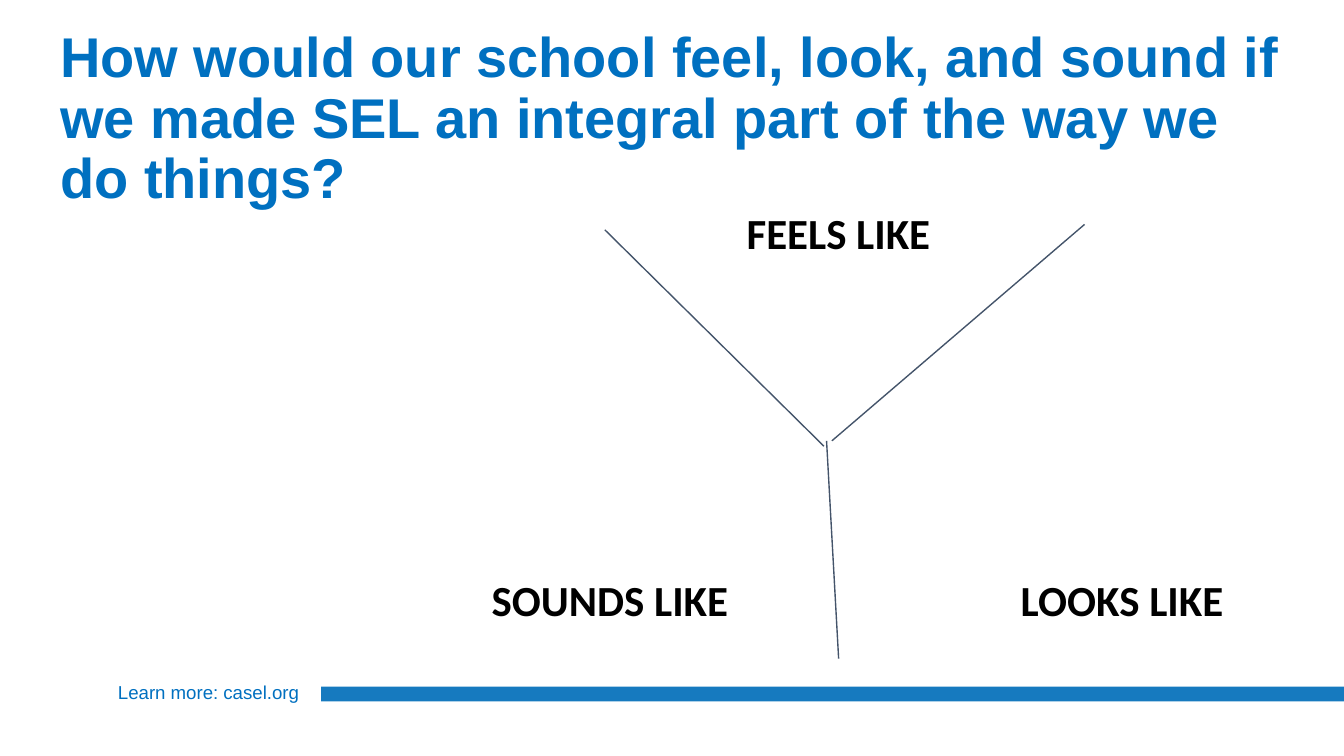
from dataclasses import dataclass

from lxml import etree
from pptx import Presentation
from pptx.dml.color import RGBColor
from pptx.enum.shapes import MSO_CONNECTOR, MSO_SHAPE
from pptx.enum.text import MSO_ANCHOR, PP_ALIGN
from pptx.oxml.ns import qn
from pptx.util import Inches, Pt

LEFT, CENTER = PP_ALIGN.LEFT, PP_ALIGN.CENTER
TOP = MSO_ANCHOR.TOP
STRAIGHT = MSO_CONNECTOR.STRAIGHT
RECTANGLE = MSO_SHAPE.RECTANGLE


@dataclass(frozen=True)
class TextStyle:
    """Look of one kind of text."""
    font: str
    size: float
    color: str
    bold: bool = False
    align: PP_ALIGN = LEFT
    inset_y: float = 0.05
    line_spacing: float = 1.0


@dataclass(frozen=True)
class Theme:
    """Colours and type sizes of the slide."""
    bar: str = "167ABF"
    branch: str = "44546A"
    branch_width: float = 0.75
    title: TextStyle = TextStyle("Arial", 30, "0070C0", bold=True, line_spacing=0.9)
    footer: TextStyle = TextStyle("Arial", 10, "0070C0")
    label: TextStyle = TextStyle("Calibri", 23, "000000", bold=True, align=CENTER, inset_y=0.1)


THEME = Theme()


def add_text(slide, box, words, style):
    """Place one styled paragraph in a box given in inches."""
    frame = slide.shapes.add_textbox(*map(Inches, box)).text_frame
    frame.word_wrap = True
    frame.vertical_anchor = TOP
    frame.margin_left = frame.margin_right = Inches(0.1)
    frame.margin_top = frame.margin_bottom = Inches(style.inset_y)
    paragraph = frame.paragraphs[0]
    paragraph.alignment = style.align
    paragraph.line_spacing = style.line_spacing
    run = paragraph.add_run()
    run.text = words
    run.font.name = style.font
    run.font.size = Pt(style.size)
    run.font.bold = style.bold
    run.font.color.rgb = RGBColor.from_string(style.color)


def add_branch(slide, start, end):
    """Draw one thin straight branch of the Y."""
    branch = slide.shapes.add_connector(STRAIGHT, *map(Inches, (*start, *end)))
    branch.line.color.rgb = RGBColor.from_string(THEME.branch)
    branch.line.width = Pt(THEME.branch_width)
    etree.SubElement(branch._element.spPr, qn("a:effectLst"))


def add_footer(slide, box):
    """Place the web address and the bar that runs to the right edge."""
    left, top, width, height = box
    add_text(slide, (left, top, 2.06, height), "Learn more: casel.org", THEME.footer)
    bar_offset = 1.61
    bar = slide.shapes.add_shape(
        RECTANGLE, *map(Inches, (left + bar_offset, top + 0.09, width - bar_offset, 0.11)))
    bar.shadow.inherit = False
    bar.fill.solid()
    bar.fill.fore_color.rgb = RGBColor.from_string(THEME.bar)
    bar.line.fill.background()


def add_y_chart(slide, box):
    """Place the three branches of the Y chart and the label of each sector."""
    left, top, width, height = box
    label_width, label_height = 1.98, 0.59
    branches = (
        ((0.95, 0.27), (2.58, 1.88)),
        ((2.60, 1.84), (2.69, height)),
        ((2.64, 1.84), (4.52, 0.23)),
    )
    for start, end in branches:
        add_branch(slide, (left + start[0], top + start[1]), (left + end[0], top + end[1]))
    lower = height - 0.73
    labels = (
        ("FEELS LIKE", 1.70, 0),
        ("SOUNDS LIKE", 0, lower),
        ("LOOKS LIKE", width - label_width, lower),
    )
    for words, x, y in labels:
        add_text(slide, (left + x, top + y, label_width, label_height), words, THEME.label)


def main():
    """Build and save the slide."""
    presentation = Presentation()
    presentation.slide_width = Inches(10)
    presentation.slide_height = presentation.slide_width * 9 // 16
    slide = presentation.slides.add_slide(presentation.slide_layouts[6])
    add_footer(slide, (0.78, 5.02, 9.22, 0.27))
    add_text(
        slide, (0.35, 0.17, 9.36, 2.04),
        "How would our school feel, look, and sound if we made SEL "
        "an integral part of the way we do things?", THEME.title)
    add_y_chart(slide, (3.55, 1.44, 5.79, 3.46))
    presentation.save("out.pptx")


if __name__ == "__main__":
    main()
